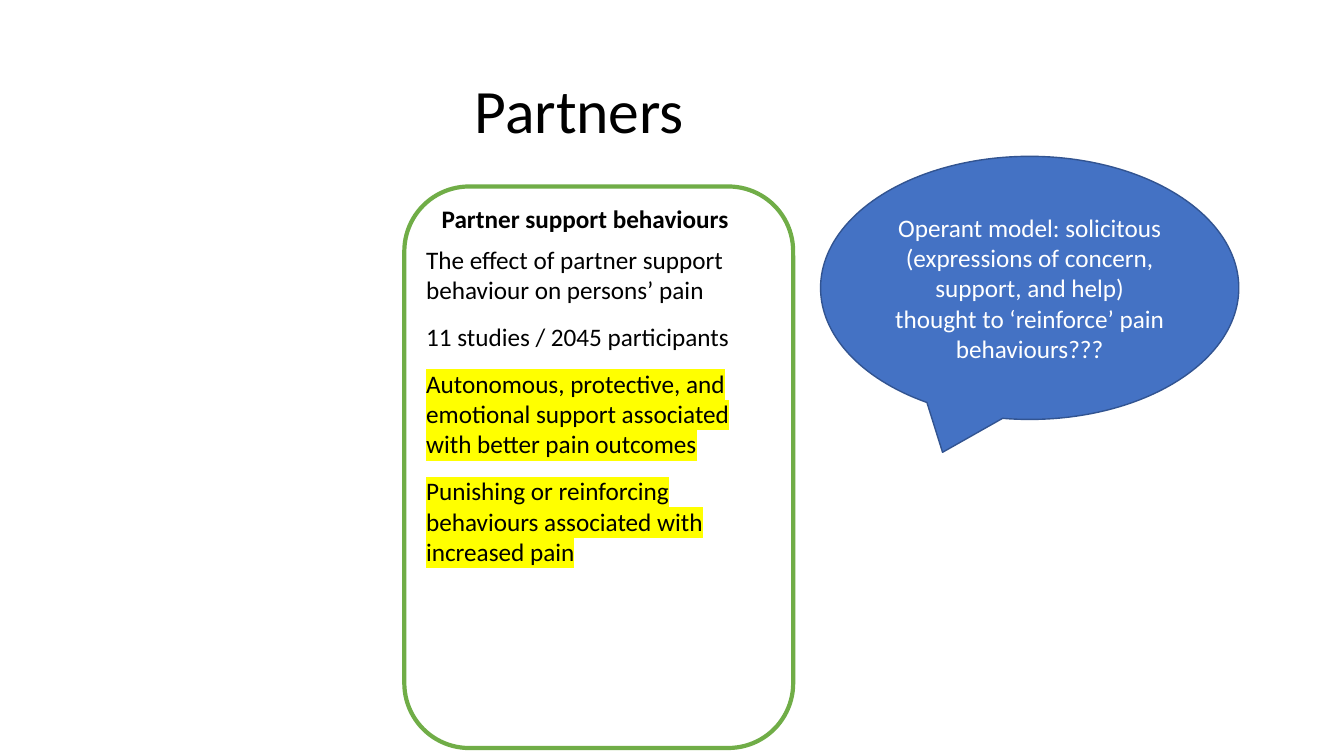
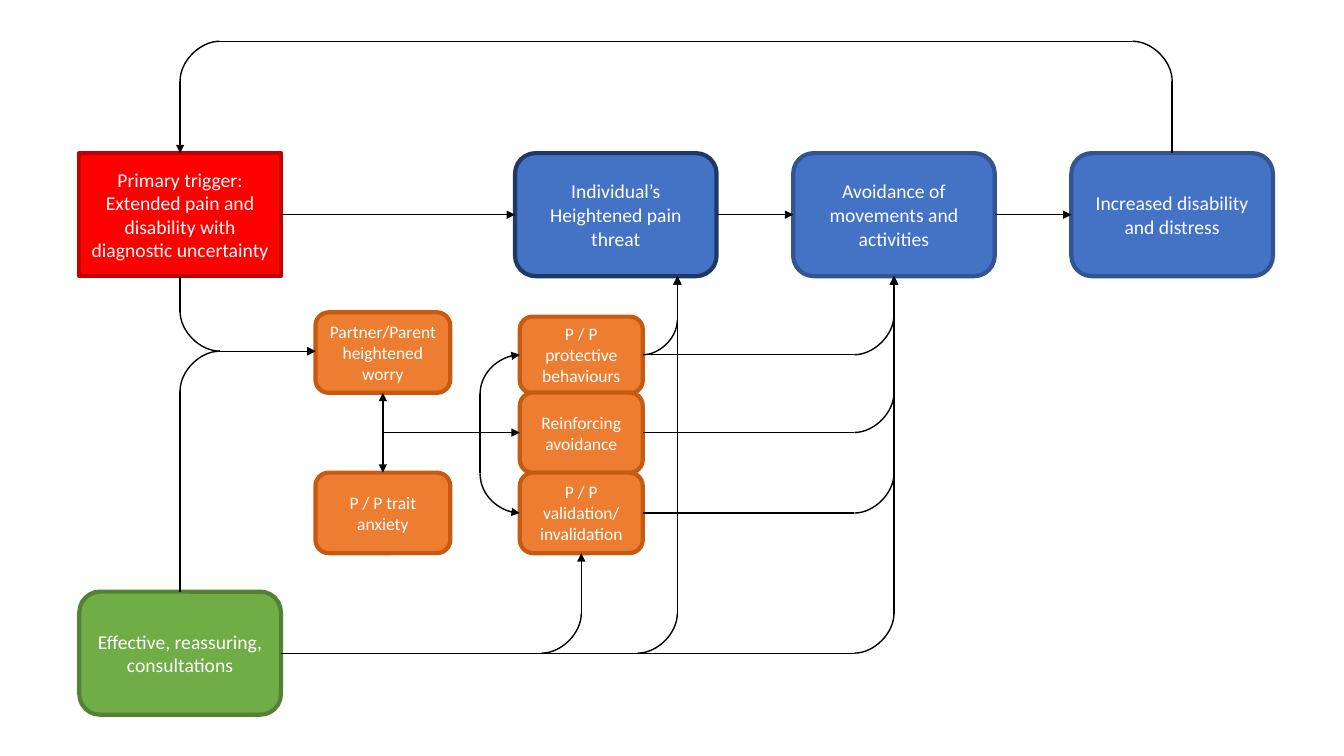
from lxml import etree
from pptx import Presentation
from pptx.dml.color import RGBColor
from pptx.enum.shapes import MSO_CONNECTOR, MSO_SHAPE
from pptx.enum.text import MSO_ANCHOR, PP_ALIGN
from pptx.oxml.ns import qn
from pptx.util import Cm, Pt

STRAIGHT, CURVE = MSO_CONNECTOR.STRAIGHT, MSO_CONNECTOR.CURVE
RECT, ROUND = MSO_SHAPE.FLOWCHART_PROCESS, MSO_SHAPE.ROUNDED_RECTANGLE
SOFT, SPEECH = MSO_SHAPE.FLOWCHART_ALTERNATE_PROCESS, MSO_SHAPE.OVAL_CALLOUT
LEFT, CENTER = PP_ALIGN.LEFT, PP_ALIGN.CENTER
TOP, MIDDLE = MSO_ANCHOR.TOP, MSO_ANCHOR.MIDDLE

FONT = "Calibri"
BLACK, WHITE, YELLOW = "000000", "FFFFFF", "FFFF00"
BLUE, NAVY, DEEP = "4472C4", "325491", "203864"
GREEN, MOSS = "70AD47", "548235"
ORANGE, RUST = "ED7D31", "C55A11"
RED, WINE = "FF0000", "C00000"
BEND = 1  # corner radius of the routes, in cm


def color(code):
    return RGBColor.from_string(code)


def write(shape, *lines, size=18, ink=BLACK, bold=False, align=LEFT,
          anchor=TOP, wrap=True, gap=0, pitch=None, mark=()):
    """Fill a shape with paragraphs; mark holds the numbers of those highlighted."""
    frame = shape.text_frame
    frame.word_wrap, frame.vertical_anchor = wrap, anchor
    for i, line in enumerate(lines):
        para = frame.add_paragraph() if i else frame.paragraphs[0]
        para.alignment = align
        if pitch:
            para.line_spacing = pitch
        if i:
            para.space_before = Pt(gap)
        run = para.add_run()
        run.text = line
        font = run.font
        font.name, font.size, font.bold = FONT, Pt(size), bold
        font.color.rgb = color(ink)
        if i in mark:
            glow = etree.Element(qn("a:highlight"))
            etree.SubElement(glow, qn("a:srgbClr"), val=YELLOW)
            run._r.rPr.find(qn("a:solidFill")).addnext(glow)


def draw(slide, kind, box, fill, edge, width=3):
    shape = slide.shapes.add_shape(kind, *map(Cm, box))
    shape.shadow.inherit = False
    if fill:
        shape.fill.solid()
        shape.fill.fore_color.rgb = color(fill)
    else:
        shape.fill.background()
    shape.line.color.rgb = color(edge)
    shape.line.width = Pt(width)
    return shape


def node(slide, kind, box, text, fill, edge, size=14, width=3):
    shape = draw(slide, kind, box, fill, edge, width)
    write(shape, text, size=size, ink=WHITE, align=CENTER, anchor=MIDDLE)


def link(slide, start, end, curved=False, head=False, tail=False):
    """Draw one line; a curved one leaves sideways and ends upright."""
    line = slide.shapes.add_connector(
        CURVE if curved else STRAIGHT, *map(Cm, (*start, *end)))
    line.line.color.rgb = color(BLACK)
    line.line.width = Pt(1)
    props = line._element.spPr
    if curved:
        props.find(qn("a:prstGeom")).set("prst", "curvedConnector2")
    for tag, used in (("a:headEnd", head), ("a:tailEnd", tail)):
        if used:
            etree.SubElement(props.find(qn("a:ln")), qn(tag), type="triangle")
    etree.SubElement(props, qn("a:effectLst"))


def span(a, b):
    return abs(a[0] - b[0]) + abs(a[1] - b[1])


def toward(a, b, dist):
    part = dist / span(a, b)
    return tuple(p + (q - p) * part for p, q in zip(a, b))


def route(slide, *points, head=False, tail=True):
    """Join points by level and upright lines with rounded corners."""
    parts, pen = [], points[0]
    for prev, turn, after in zip(points, points[1:], points[2:]):
        bend = min(BEND, span(prev, turn), span(turn, after))
        enter, leave = toward(turn, prev, bend), toward(turn, after, bend)
        parts += [(pen, enter, False), (enter, leave, True)]
        pen = leave
    parts.append((pen, points[-1], False))
    parts = [part for part in parts if span(*part[:2]) > 0.05]
    for i, (start, end, curved) in enumerate(parts):
        first, last = head and i == 0, tail and i == len(parts) - 1
        # A curve that starts upright is drawn from its other end.
        if curved and start[0] == points[i // 2 + 1][0] and is_upright(start, points):
            start, end, first, last = end, start, last, first
        link(slide, start, end, curved, first, last)


def is_upright(spot, points):
    """Tell whether the segment that holds the spot is vertical."""
    for a, b in zip(points, points[1:]):
        if abs(span(a, spot) + span(spot, b) - span(a, b)) < 0.01:
            return abs(a[0] - b[0]) < 0.01
    return False


def panel(slide, box):
    left, top, width, _ = box
    draw(slide, ROUND, box, None, GREEN)
    head = slide.shapes.add_textbox(
        Cm(left + 0.69), Cm(top + 0.3), Cm(7.8), Cm(1.02))
    write(head, "Partner support behaviours", bold=True, wrap=False)
    body = slide.shapes.add_textbox(
        Cm(left + 0.3), Cm(top + 1.32), Cm(width - 0.63), Cm(9.25))
    write(body,
          "The effect of partner support behaviour on persons’ pain",
          "11 studies / 2045 participants",
          "Autonomous, protective, and emotional support associated "
          "with better pain outcomes",
          "Punishing or reinforcing behaviours associated with increased pain",
          gap=12, mark=(2, 3))


def partners(deck):
    slide = deck.slides.add_slide(deck.slide_layouts[5])
    title = slide.shapes.title
    title.left, title.top, title.width, title.height = map(
        Cm, (0, 1.02, 29.21, 3.68))
    write(title, "Partners", size=44, align=CENTER, anchor=MIDDLE, pitch=0.9)
    panel(slide, (10.19, 4.7, 9.8, 14.15))
    node(slide, SPEECH, (20.68, 3.94, 10.54, 6.63),
         "Operant model: solicitous (expressions of concern, support, and "
         "help) thought to ‘reinforce’ pain behaviours???",
         BLUE, NAVY, size=18, width=1)


def boxes(slide):
    wide, high, top = 5.08, 3.1, 3.86
    node(slide, RECT, (2, top, wide, high),
         "Primary trigger: Extended pain and disability with "
         "diagnostic uncertainty", RED, WINE)
    chain = (("Individual’s Heightened pain threat", DEEP),
             ("Avoidance of movements and activities", NAVY),
             ("Increased disability and distress", NAVY))
    for i, (text, edge) in enumerate(chain):
        node(slide, SOFT, (12.98 + 7.01 * i, top, wide, high), text, BLUE, edge)
    node(slide, SOFT, (2, 14.91, wide, high),
         "Effective, reassuring, consultations", GREEN, MOSS)
    family = ((13.1, 7.98, 3.1, 1.93, "P / P protective behaviours"),
              (7.95, 7.87, 3.4, 2.03, "Partner/Parent heightened worry"),
              (13.1, 9.89, 3.1, 2.03, "Reinforcing avoidance"),
              (13.1, 11.91, 3.1, 2.03, "P / P validation/ invalidation"),
              (7.95, 11.91, 3.4, 2.03, "P / P trait anxiety"))
    for *box, text in family:
        node(slide, ROUND, box, text, ORANGE, RUST, size=12.5)


def arrows(slide):
    top, mid, base = 3.86, 5.41, 6.96
    start, threat, avoid, end = 4.54, 17.07, 22.53, 29.54
    worry, care = 8.85, 16.46
    rows = (8.94, 10.9, 12.93)
    for a, b in ((7.08, 12.98), (18.06, 19.99), (25.07, 27)):
        route(slide, (a, mid), (b, mid))
    route(slide, (end, top), (end, 1.04), (start, 1.04), (start, top))
    for y in (base, 14.91):
        route(slide, (start, y), (start, worry), (7.95, worry))
    route(slide, (9.65, 9.9), (9.65, 11.91), head=True)
    route(slide, (9.65, rows[1]), (13.1, rows[1]))
    route(slide, (13.1, rows[0]), (12.1, rows[0]),
          (12.1, rows[2]), (13.1, rows[2]), head=True)
    route(slide, (16.2, rows[0]), (threat, rows[0]), (threat, base))
    for y in rows:
        route(slide, (16.2, y), (avoid, y), (avoid, base))
    for x, y in ((14.65, 13.94), (threat, base), (avoid, base)):
        route(slide, (7.08, care), (x, care), (x, y))


def model(deck):
    slide = deck.slides.add_slide(deck.slide_layouts[6])
    boxes(slide)
    arrows(slide)


def main():
    deck = Presentation()
    deck.slide_width, deck.slide_height = Cm(33.87), Cm(19.05)
    partners(deck)
    model(deck)
    deck.save("out.pptx")


if __name__ == "__main__":
    main()
